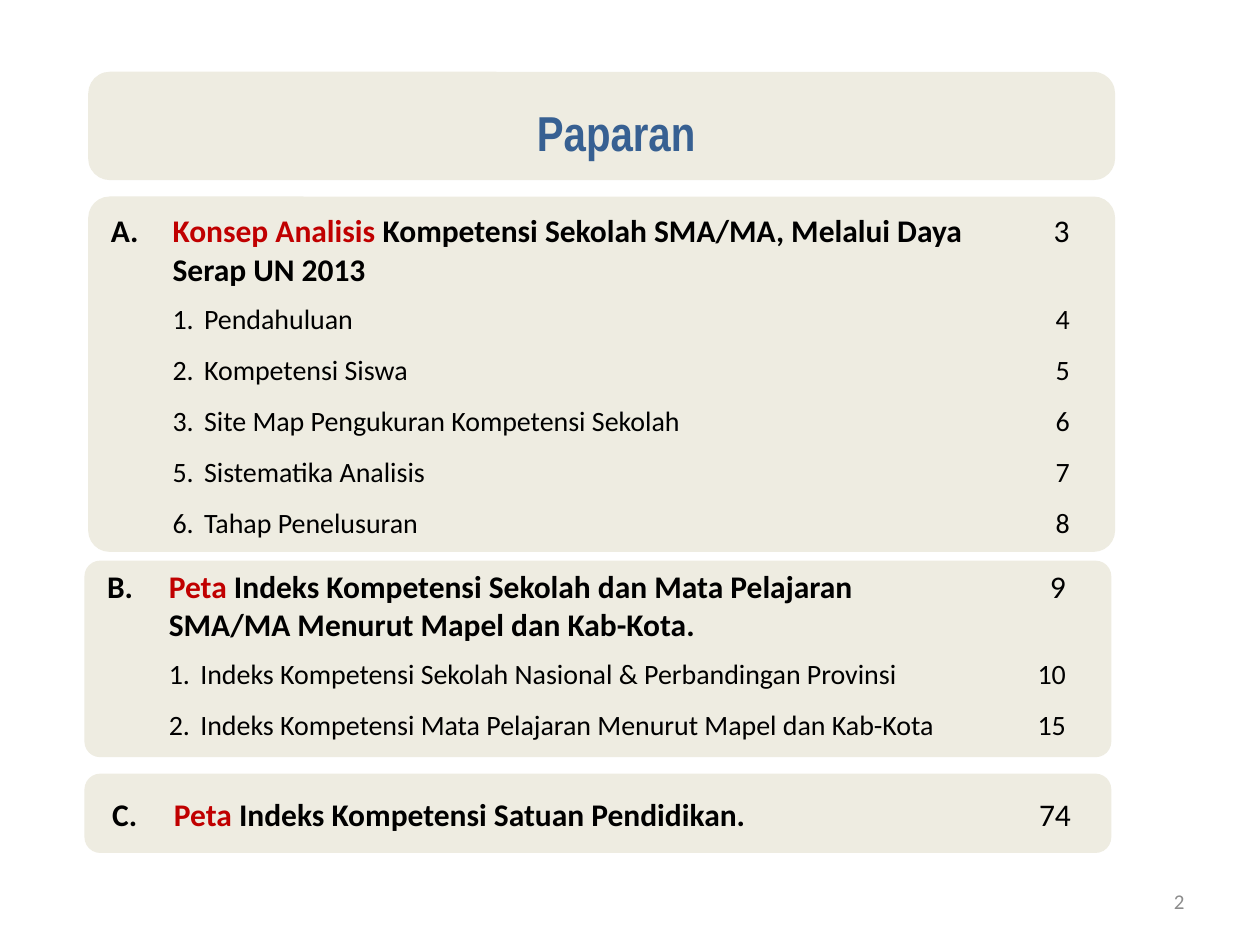
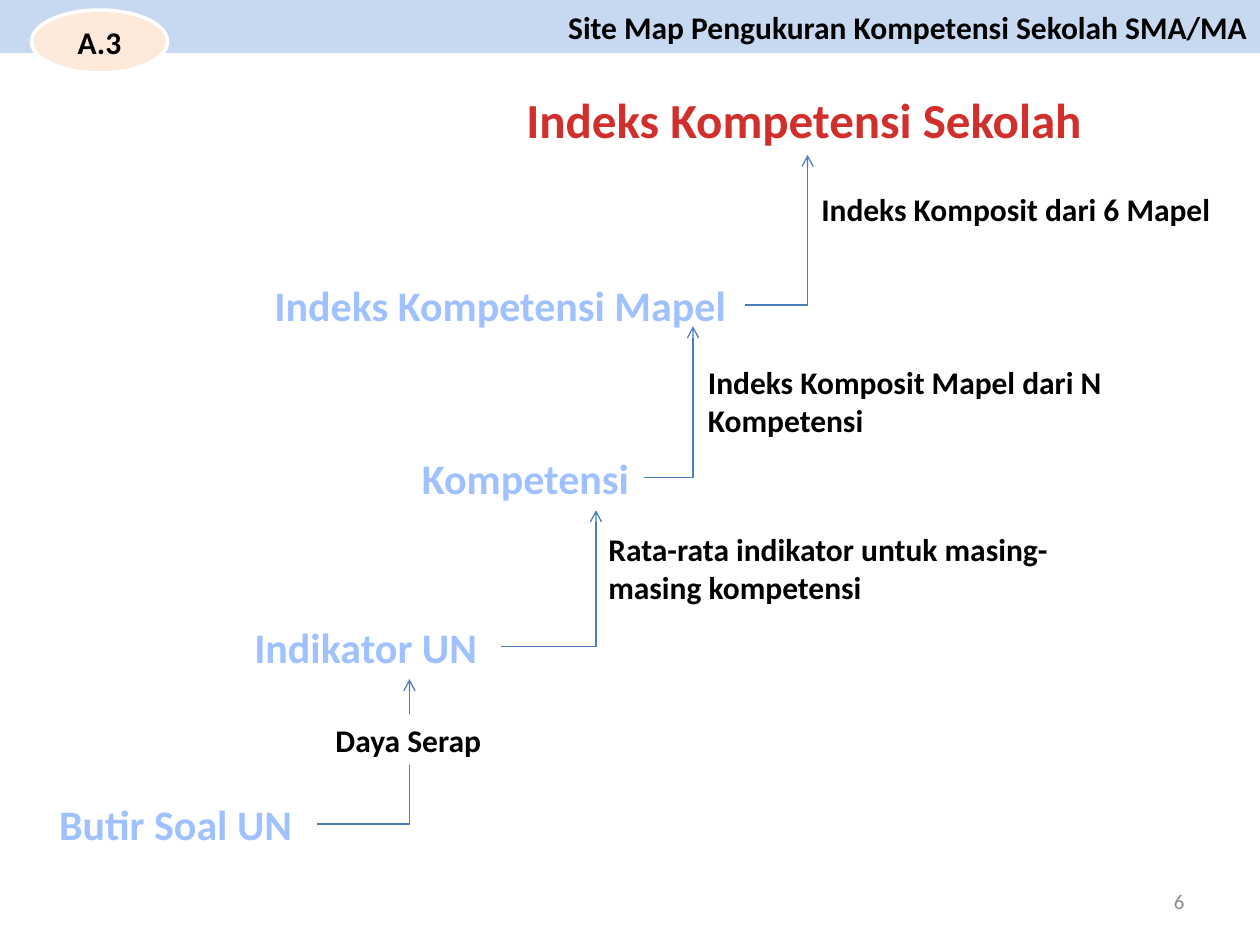
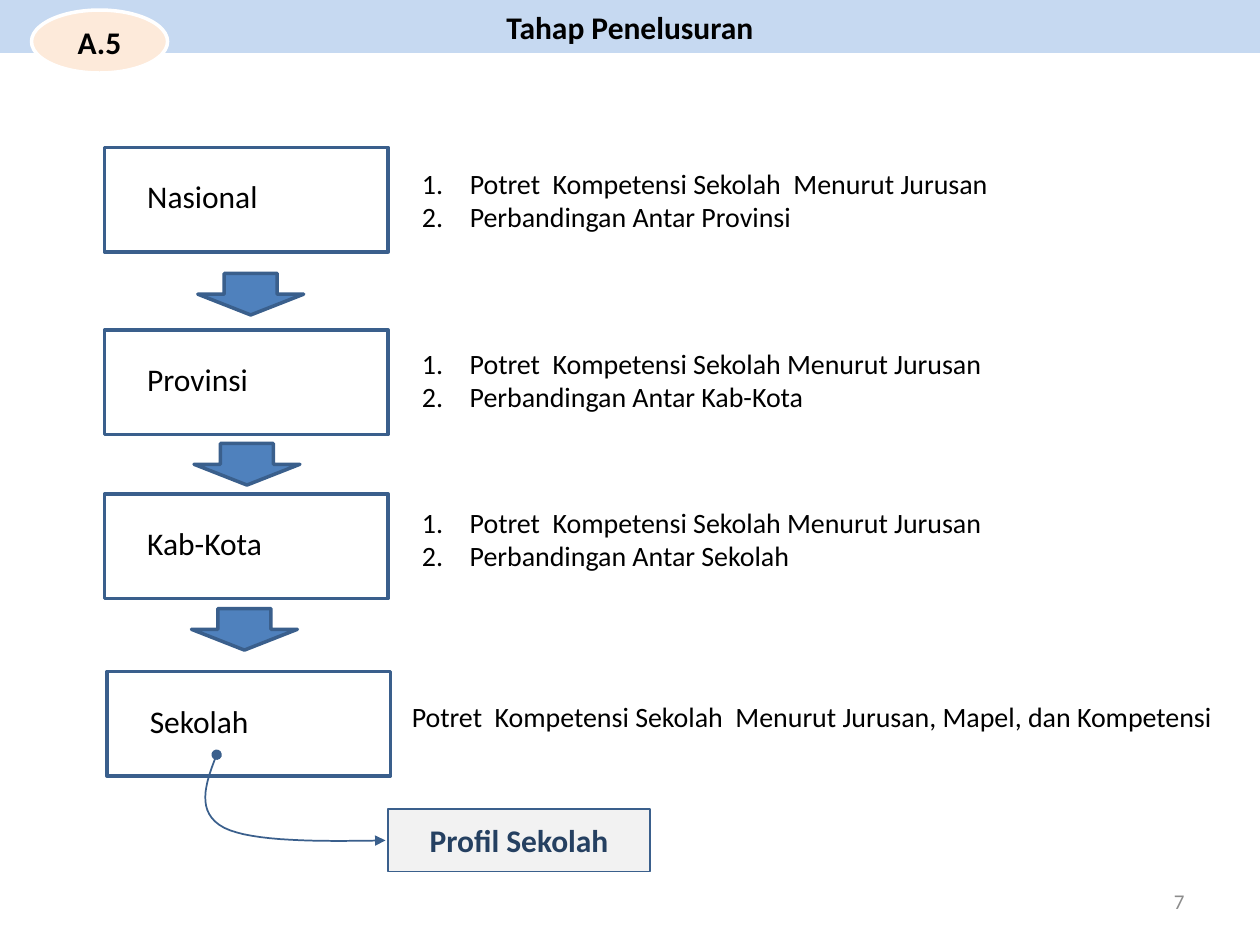
import dataclasses

import pptx
import pptx.dml.color
import pptx.enum.shapes
import pptx.enum.text
import pptx.oxml.ns
import pptx.oxml.xmlchemy
import pptx.util
from lxml import etree

Inches = pptx.util.Inches
Pt = pptx.util.Pt
qn = pptx.oxml.ns.qn
SHAPE = pptx.enum.shapes.MSO_SHAPE
ALIGN = pptx.enum.text.PP_ALIGN
ANCHOR = pptx.enum.text.MSO_ANCHOR
AUTO_SIZE = pptx.enum.text.MSO_AUTO_SIZE


# ---- Theme: colours, fonts and type sizes ----
@dataclasses.dataclass(frozen=True)
class Theme:
    body_font: str = "Calibri"
    cover_font: str = "Arial Narrow"
    black: str = "000000"
    white: str = "FFFFFF"
    panel: str = "EEECE1"
    band: str = "C6D9F1"
    badge: str = "FDEADA"
    heading: str = "376092"
    accent: str = "C00000"
    level: str = "A0C1FF"
    goal: str = "D02F2C"
    step_line: str = "4B7EBC"
    arrow: str = "4F81BD"
    outline: str = "3A5F8C"
    profile: str = "F2F2F2"
    profile_text: str = "254061"
    grey: str = "8C8C8C"
    small: int = 12
    item: int = 16
    base: int = 18
    big: int = 24
    huge: int = 28


T = Theme()


def style(size=T.base, color=T.black, bold=False, font=T.body_font):
    return {"size": Pt(size), "bold": bold, "name": font, "color": color}


PLAIN = style()
BOLD = style(bold=True)
ACCENT = style(color=T.accent, bold=True)
ITEM = style(T.item)
LEVEL = style(T.big, T.level, True)
GOAL = style(T.huge, T.goal, True)
COVER = style(T.huge, T.heading, True, T.cover_font)
PROFILE = style(color=T.profile_text, bold=True)
FOOTER = style(T.small, T.grey)

NO_GRID_STYLE = "{2D5ABB26-0587-4C30-8999-92F81FD0307C}"


# ---- Formatting helpers ----
def rgb(value):
    return pptx.dml.color.RGBColor.from_string(value)


def box(*at):
    return [Inches(v) for v in at]


def add_runs(p, runs, align=ALIGN.LEFT):
    p.alignment = align
    for text, fmt in runs:
        r = p.add_run()
        r.text = text
        for name, value in fmt.items():
            if name == "color":
                r.font.color.rgb = rgb(value)
            else:
                setattr(r.font, name, value)


def set_indent(p, inches):
    pPr = p._p.get_or_add_pPr()
    pPr.set("marL", str(Inches(inches)))
    pPr.set("indent", str(-Inches(inches)))
    return pPr


def set_line_ends(line, **ends):
    ln = line._get_or_add_ln()
    for tag, kind in ends.items():
        etree.SubElement(ln, qn(f"a:{tag}"), type=kind)


# ---- Elements ----
def add_shape(s, kind, at, fill=None, line=None, width=0.75, corner=None):
    sp = s.shapes.add_shape(kind, *box(*at))
    sp.shadow.inherit = False
    paint(sp, fill, line, width)
    if corner is not None:
        sp.adjustments[0] = corner
    return sp


def paint(sp, fill=None, line=None, width=0.75):
    if fill:
        sp.fill.solid()
        sp.fill.fore_color.rgb = rgb(fill)
    else:
        sp.fill.background()
    if line:
        sp.line.color.rgb = rgb(line)
        sp.line.width = Pt(width)
    else:
        sp.line.fill.background()


def write(sp, text, fmt, align=ALIGN.CENTER, anchor=ANCHOR.MIDDLE):
    tf = sp.text_frame
    tf.word_wrap = True
    tf.auto_size = AUTO_SIZE.NONE
    tf.vertical_anchor = anchor
    add_runs(tf.paragraphs[0], [(text, fmt)], align)


def add_text(s, at, lines, fmt, wrap=False, numbered=False):
    tf = s.shapes.add_textbox(*box(*at)).text_frame
    tf.word_wrap = wrap
    tf.auto_size = AUTO_SIZE.SHAPE_TO_FIT_TEXT
    for i, line in enumerate(lines):
        p = tf.add_paragraph() if i else tf.paragraphs[0]
        if numbered:
            pPr = set_indent(p, 0.38)
            etree.SubElement(pPr, qn("a:buFont"), typeface="+mj-lt")
            etree.SubElement(pPr, qn("a:buAutoNum"), type="arabicPeriod")
        add_runs(p, [(line, fmt)])


def add_title(s, at, text, fmt, align=ALIGN.CENTER):
    sp = s.shapes.title
    sp.left, sp.top, sp.width, sp.height = box(*at)
    write(sp, text, fmt, align)
    return sp


def add_page_number(s, number):
    sp = s.shapes.add_textbox(*box(7.17, 6.95, 2.33, 0.4))
    write(sp, str(number), FOOTER, ALIGN.RIGHT)


def add_header(s, title, code, align=ALIGN.CENTER):
    band = add_title(s, (0, 0, 10, 0.42), title, BOLD, align)
    paint(band, T.band)
    badge = add_shape(s, SHAPE.OVAL, (0.25, 0.08, 1.08, 0.5), T.badge, T.white, 2)
    write(badge, code, BOLD)


def add_contents(s, left, top, head_height, letter, lead, rest, page, items=()):
    """One lettered section: heading row, then numbered rows with page numbers."""
    widths = (0.49, 6.6, 0.72)
    heights = [head_height] + [0.4] * len(items)
    frame = s.shapes.add_table(len(heights), len(widths),
                               *box(left, top, sum(widths), sum(heights)))
    table = frame.table
    table.first_row = table.horz_banding = False
    table._tbl.tblPr.find(qn("a:tableStyleId")).text = NO_GRID_STYLE
    for col, width in zip(table.columns, widths):
        col.width = Inches(width)
    for row, height in zip(table.rows, heights):
        row.height = Inches(height)
        for cell in row.cells:
            cell.fill.background()

    def put(row, col, runs, align=ALIGN.LEFT):
        p = table.cell(row, col).text_frame.paragraphs[0]
        add_runs(p, runs, align)
        return p

    put(0, 0, [(letter, BOLD)])
    put(0, 1, [(lead + " ", ACCENT), (rest, BOLD)])
    put(0, 2, [(page, PLAIN)], ALIGN.RIGHT)
    for i, (number, text, item_page) in enumerate(items, 1):
        set_indent(put(i, 1, [(f"{number}\t{text}", ITEM)]), 0.25)
        put(i, 2, [(item_page, ITEM)], ALIGN.RIGHT)


def add_step(s, x1, y1, x2, y2):
    """Line that runs right, then up to an arrowhead."""
    cx = s.shapes.add_connector(pptx.enum.shapes.MSO_CONNECTOR.ELBOW,
                                *box(x1, y1, x2, y2))
    spPr = cx._element.spPr
    spPr.find(qn("a:prstGeom")).set("prst", "bentConnector2")
    cx.line.color.rgb = rgb(T.step_line)
    cx.line.width = Pt(0.75)
    set_line_ends(cx.line, tailEnd="arrow")
    etree.SubElement(spPr, qn("a:effectLst"))


def bezier(p0, p1, p2, p3, steps=16):
    for i in range(1, steps + 1):
        t = i / steps
        u = 1 - t
        yield tuple(u**3 * a + 3 * u * u * t * b + 3 * u * t * t * c + t**3 * d
                    for a, b, c, d in zip(p0, p1, p2, p3))


def add_curve(s, start, *segments):
    points, last = [], start
    for segment in segments:
        points += [box(*pt) for pt in bezier(last, *segment)]
        last = segment[-1]
    builder = s.shapes.build_freeform(*box(*start))
    builder.add_line_segments(points, close=False)
    sp = builder.convert_to_shape()
    sp.shadow.inherit = False
    paint(sp, line=T.outline, width=1)
    set_line_ends(sp.line, headEnd="oval", tailEnd="triangle")


# ---- Slides ----
def build_contents(s):
    # Panels
    for left, top, height, corner in ((0.7, 0.57, 0.86, 0.2), (0.7, 1.56, 2.82, 0.06),
                                      (0.67, 4.45, 1.56, 0.08), (0.67, 6.14, 0.63, 0.2)):
        add_shape(s, SHAPE.ROUNDED_RECTANGLE, (left, top, 8.15, height),
                  T.panel, corner=corner)
    # Title, brought in front of its panel
    title = add_title(s, (0.2, 0.76, 9.38, 0.57), "Paparan", COVER).element
    title.getparent().append(title)
    # Sections
    add_contents(s, 0.78, 1.64, 0.7, "A.", "Konsep Analisis",
                 "Kompetensi Sekolah SMA/MA, Melalui Daya Serap UN 2013", "3", [
                     ("1.", "Pendahuluan", "4"),
                     ("2.", "Kompetensi Siswa", "5"),
                     ("3.", "Site Map Pengukuran Kompetensi Sekolah", "6"),
                     ("5.", "Sistematika Analisis", "7"),
                     ("6.", "Tahap Penelusuran", "8")])
    add_contents(s, 0.75, 4.46, 0.7, "B.", "Peta",
                 "Indeks Kompetensi Sekolah dan Mata Pelajaran SMA/MA "
                 "Menurut Mapel dan Kab-Kota.", "9", [
                     ("1.", "Indeks Kompetensi Sekolah Nasional & Perbandingan Provinsi", "10"),
                     ("2.", "Indeks Kompetensi Mata Pelajaran Menurut Mapel dan Kab-Kota", "15")])
    add_contents(s, 0.79, 6.27, 0.41, "C.", "Peta",
                 "Indeks Kompetensi Satuan Pendidikan.", "74")
    add_page_number(s, 2)


def build_site_map(s):
    add_header(s, "Site Map Pengukuran Kompetensi Sekolah SMA/MA", "A.3", ALIGN.RIGHT)
    # Levels, from test items up to the school index
    for left, top, width, text in ((0.37, 6.29, 2.15, "Butir Soal UN"),
                                   (1.92, 4.88, 2.06, "Indikator UN"),
                                   (3.25, 3.54, 1.86, "Kompetensi"),
                                   (2.08, 2.17, 3.82, "Indeks Kompetensi Mapel")):
        add_text(s, (left, top, width, 0.5), [text], LEVEL)
    add_text(s, (4.08, 0.66, 4.66, 0.57), ["Indeks Kompetensi Sekolah"], GOAL)
    # Steps between levels
    for ends in ((2.52, 6.54, 3.25, 5.39), (3.98, 5.13, 4.73, 4.05),
                 (5.11, 3.79, 5.5, 2.59), (5.91, 2.42, 6.41, 1.23)):
        add_step(s, *ends)
    # Notes on the steps
    for at, text in (((4.73, 4.16, 4.1, 0.71),
                      "Rata-rata indikator untuk masing-masing kompetensi"),
                     ((5.52, 2.83, 3.59, 0.71), "Indeks Komposit Mapel dari N Kompetensi"),
                     ((6.42, 1.46, 3.3, 0.4), "Indeks Komposit dari 6 Mapel")):
        add_text(s, at, [text], BOLD, wrap=True)
    absorb = add_shape(s, SHAPE.RECTANGLE, (2.48, 5.67, 1.52, 0.4), T.white)
    write(absorb, "Daya Serap", BOLD)
    add_page_number(s, 6)


def build_stages(s):
    add_header(s, "Tahap Penelusuran", "A.5")
    # Stage boxes
    for left, top, name, width in ((0.83, 1.17, "Nasional", 1.09),
                                   (0.83, 2.62, "Provinsi", 1.01),
                                   (0.83, 3.92, "Kab-Kota", 1.12),
                                   (0.85, 5.33, "Sekolah", 0.99)):
        add_shape(s, SHAPE.RECTANGLE, (left, top, 2.25, 0.83), line=T.outline, width=2)
        add_text(s, (left + 0.24, top + 0.19, width, 0.4), [name], PLAIN)
    # Arrows between stages
    for left, top in ((1.57, 2.17), (1.54, 3.52), (1.52, 4.83)):
        add_shape(s, SHAPE.DOWN_ARROW, (left, top, 0.84, 0.33), T.arrow, T.outline, 2)
    # What each stage shows
    portrait = "Potret  Kompetensi Sekolah Menurut Jurusan"
    for top, width, first, second in (
            (1.27, 4.75, "Potret  Kompetensi Sekolah  Menurut Jurusan",
             "Perbandingan Antar Provinsi"),
            (2.7, 4.7, portrait, "Perbandingan Antar Kab-Kota"),
            (3.96, 4.7, portrait, "Perbandingan Antar Sekolah")):
        add_text(s, (3.25, top, width, 0.64), [first, second], ITEM, numbered=True)
    add_text(s, (3.17, 5.5, 6.63, 0.37),
             ["Potret  Kompetensi Sekolah  Menurut Jurusan, Mapel, dan Kompetensi"], ITEM)
    # School profile
    profile = add_shape(s, SHAPE.RECTANGLE, (3.08, 6.42, 2.08, 0.5), T.profile, T.outline)
    write(profile, "Profil Sekolah", PROFILE)
    add_curve(s, (1.72, 5.99),
              ((1.63, 6.22), (1.55, 6.45), (1.78, 6.57)),
              ((2, 6.68), (2.53, 6.68), (3.06, 6.67)))
    add_page_number(s, 7)


def main():
    prs = pptx.Presentation()
    prs.slide_width, prs.slide_height = box(10, 7.5)
    title_only = prs.slide_layouts[5]
    for build in (build_contents, build_site_map, build_stages):
        build(prs.slides.add_slide(title_only))
    prs.save("out.pptx")


if __name__ == "__main__":
    main()
